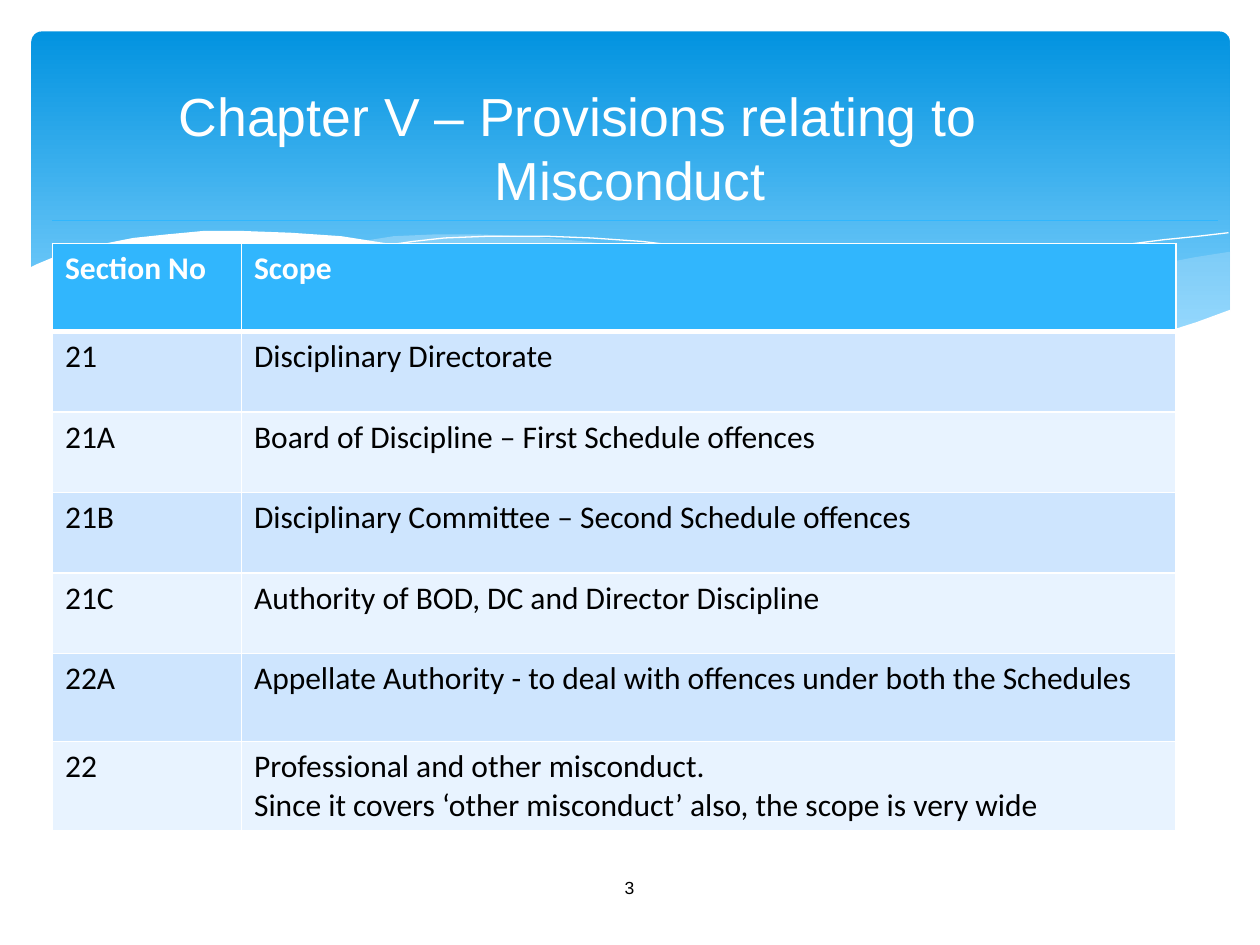
from lxml.etree import SubElement
from pptx import Presentation
from pptx.dml.color import RGBColor
from pptx.enum.shapes import MSO_CONNECTOR, MSO_SHAPE
from pptx.enum.text import MSO_ANCHOR, MSO_AUTO_SIZE, PP_ALIGN
from pptx.oxml import parse_xml
from pptx.oxml.ns import nsdecls, qn
from pptx.util import Pt

WHITE = RGBColor(0xFF, 0xFF, 0xFF)
BLACK = RGBColor(0x00, 0x00, 0x00)
DEEP_BLUE = RGBColor(0x02, 0x93, 0xE0)
SKY_BLUE = RGBColor(0x83, 0xD3, 0xFE)
PALE_BLUE = RGBColor(0xC6, 0xE7, 0xFC)
ACCENT = RGBColor(0x31, 0xB6, 0xFD)
BANDS = (RGBColor(0xCE, 0xE5, 0xFE), RGBColor(0xE8, 0xF3, 0xFF))

# Content
HEADING = "Chapter V – Provisions relating to Misconduct"
PAGE_NUMBER = "3"
PROVISIONS = [
    ("Section No", "Scope"),
    ("21", "Disciplinary Directorate"),
    ("21A", "Board of Discipline – First Schedule offences"),
    ("21B", "Disciplinary Committee – Second Schedule offences"),
    ("21C", "Authority of BOD, DC and Director Discipline"),
    ("22A", "Appellate Authority - to deal with offences under both the Schedules"),
    ("22", "Professional and other misconduct.\n"
           "Since it covers ‘other misconduct’ also, the scope is very wide"),
]
COLUMN_WIDTHS = (108, 534)
ROW_HEIGHTS = (50.4, 46, 46, 46, 46, 50.4, 50.4)

# Text formats
HEADING_FONT = {"name": "Arial", "size": Pt(30.6)}
NUMBER_FONT = {"name": "Arial", "size": Pt(10)}
HEADER_FONT = {"name": "Calibri", "size": Pt(18), "bold": True}
BODY_FONT = {**HEADER_FONT, "bold": False}

# Banner waves, in points: fill, opacity in percent, outline points
WAVES = [
    (PALE_BLUE, 29, [
        (702, 144), (682.6, 146.9), (652.3, 153.4), (619.9, 160.6), (579.6, 170.6),
        (542.2, 178.6), (508.3, 185), (475.9, 190.8), (497.5, 193.7), (527, 197.3),
        (553.7, 199.4), (578.2, 200.2), (601.2, 199.4), (627.8, 197.3), (651.6, 193.7),
        (673.2, 188.6), (693.4, 181.4), (702.7, 177.8), (702.7, 144)]),
    (PALE_BLUE, 40, [
        (643, 196.6), (602.6, 190.8), (558, 182.9), (508.3, 172.8), (452.9, 159.8),
        (420.5, 151.9), (389.5, 146.2), (360.7, 141.1), (334.1, 137.5), (302.4, 134.6),
        (273.6, 133.9), (247.7, 133.9), (225.4, 135.4), (205.9, 137.5), (232.6, 141.1),
        (260.6, 146.2), (290.9, 151.9), (323.3, 159.8), (381.6, 172.8), (432.7, 183.6),
        (478.8, 191.5), (519.8, 197.3), (556.6, 200.2), (589, 200.9), (617, 199.4)]),
    (None, 100, [
        (222.5, 140.4), (236.2, 138.2), (254.2, 136.1), (278.6, 134.6), (311.8, 134.6),
        (337.7, 136.1), (367.2, 138.2), (400.3, 141.8), (437.8, 146.9), (478.8, 153.4),
        (523.4, 162.7), (572.4, 174.2), (625, 187.9), (653, 195.8)]),
    (None, 100, [
        (441.4, 185), (483.8, 173.5), (518.4, 164.9), (558.7, 155.5), (601.9, 146.9),
        (634.3, 141.1), (665.3, 136.8), (684.7, 134.6), (702, 133.2)]),
    (WHITE, 100, [
        (703.4, 177.1), (684, 184.3), (662.4, 190.8), (638.6, 195.1), (612, 198),
        (582.5, 199.4), (547.9, 198), (509.8, 194.4), (465.8, 188.6), (416.9, 180),
        (362.2, 167.8), (301, 153.4), (262.8, 145.4), (226.8, 139.7), (195.1, 135.4),
        (165.6, 133.2), (139, 132.5), (115.9, 132.5), (95, 133.9), (76.3, 136.1),
        (61.2, 139), (48.2, 141.8), (33.1, 146.2), (20.9, 151.2), (16.6, 153.4),
        (16.6, 236.9), (703.4, 236.9)]),
]


def box(left, top, width, height):
    return Pt(left), Pt(top), Pt(width), Pt(height)


def style(paragraph, font_format, color):
    for key, value in font_format.items():
        setattr(paragraph.font, key, value)
    paragraph.font.color.rgb = color


def add_wave(shapes, color, opacity, points):
    builder = shapes.build_freeform(*points[0], scale=Pt(1))
    builder.add_line_segments(points[1:], close=color is not None)
    wave = builder.convert_to_shape()
    wave.shadow.inherit = False
    if color is None:
        wave.fill.background()
        wave.line.color.rgb = WHITE
        wave.line.width = Pt(0)
        return
    wave.line.fill.background()
    wave.fill.solid()
    wave.fill.fore_color.rgb = color
    if opacity < 100:
        tint = wave.element.spPr.find(qn("a:solidFill"))[0]
        SubElement(tint, qn("a:alpha"), val=str(opacity * 1000))


def set_borders(cell, bottom_width):
    widths = {"lnL": 1, "lnR": 1, "lnT": 1, "lnB": bottom_width}
    properties = cell._tc.get_or_add_tcPr()
    for position, (side, width) in enumerate(widths.items()):
        properties.insert(position, parse_xml(
            f'<a:{side} {nsdecls("a")} w="{Pt(width)}"><a:solidFill>'
            f'<a:srgbClr val="{WHITE}"/></a:solidFill></a:{side}>'))


presentation = Presentation()
presentation.slide_width, presentation.slide_height = Pt(720), Pt(540)
slide = presentation.slides.add_slide(presentation.slide_layouts[5])
shapes = slide.shapes

# Banner
banner = shapes.add_shape(MSO_SHAPE.ROUNDED_RECTANGLE, *box(18, 18, 684.7, 194.4))
banner.adjustments[0] = 0.03
banner.shadow.inherit = False
banner.line.fill.background()
banner.fill.gradient()
banner.fill.gradient_angle = 270
for stop, color, position in zip(banner.fill.gradient_stops, (DEEP_BLUE, SKY_BLUE), (0, 0.9)):
    stop.color.rgb = color
    stop.position = position
for wave in WAVES:
    add_wave(shapes, *wave)

# Provisions table
provisions = shapes.add_table(
    len(PROVISIONS), len(COLUMN_WIDTHS),
    *box(30, 139, sum(COLUMN_WIDTHS), sum(ROW_HEIGHTS))).table
for column, width in zip(provisions.columns, COLUMN_WIDTHS):
    column.width = Pt(width)
for index, (row, height, texts) in enumerate(zip(provisions.rows, ROW_HEIGHTS, PROVISIONS)):
    is_header = index == 0
    row.height = Pt(height)
    for cell, text in zip(row.cells, texts):
        cell.text = text
        cell.fill.solid()
        cell.fill.fore_color.rgb = ACCENT if is_header else BANDS[(index - 1) % 2]
        set_borders(cell, 3 if is_header else 1)
        for paragraph in cell.text_frame.paragraphs:
            style(paragraph, HEADER_FONT if is_header else BODY_FONT,
                  WHITE if is_header else BLACK)

# Page number
number = shapes.add_textbox(*box(314, 492.5, 91.5, 28.8)).text_frame
number.word_wrap = True
number.vertical_anchor = MSO_ANCHOR.MIDDLE
number.text = PAGE_NUMBER
number.paragraphs[0].alignment = PP_ALIGN.CENTER
style(number.paragraphs[0], NUMBER_FONT, BLACK)

# Heading, above the banner, with a hanging indent that sets its first line to the left
HANGING = 60
title = shapes.title
title.left, title.top, title.width, title.height = box(24, 54, 672, 60)
heading = title.text_frame
heading.text = HEADING
heading.word_wrap = True
heading.auto_size = MSO_AUTO_SIZE.NONE
heading.vertical_anchor = MSO_ANCHOR.MIDDLE
heading.margin_right = Pt(7.2 + HANGING)
heading_line = heading.paragraphs[0]
heading_line.alignment = PP_ALIGN.CENTER
style(heading_line, HEADING_FONT, WHITE)
indents = heading_line._p.get_or_add_pPr()
indents.set("marL", str(Pt(HANGING)))
indents.set("indent", str(-Pt(HANGING)))
title.element.getparent().append(title.element)

# Rule under the heading
rule = shapes.add_connector(MSO_CONNECTOR.STRAIGHT, Pt(30), Pt(126), Pt(696), Pt(126))
rule.line.color.rgb = ACCENT
rule.line.width = Pt(0.75)
SubElement(rule.element.spPr, qn("a:effectLst"))

presentation.save("out.pptx")
